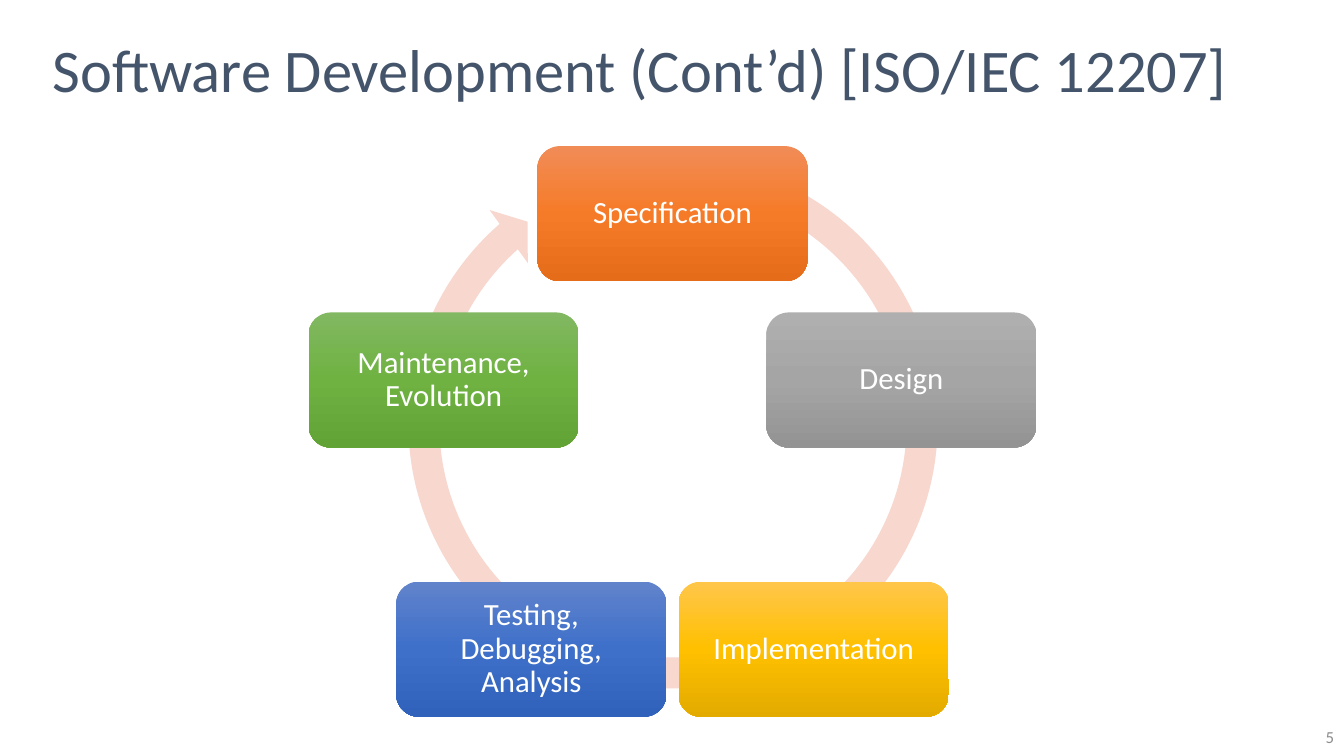
from copy import deepcopy
from dataclasses import dataclass
from math import cos, radians, sin

from pptx import Presentation
from pptx.dml.color import RGBColor
from pptx.enum.shapes import MSO_SHAPE as Shape
from pptx.enum.text import MSO_ANCHOR as Anchor, MSO_AUTO_SIZE as AutoSize, PP_ALIGN as Align
from pptx.oxml.ns import qn
from pptx.util import Inches, Pt

HEADING = "Software Development (Cont’d) [ISO/IEC 12207]"
PAGE = "5"
PHASES = [
    ("Specification", ("F18C57", "F67B28", "E56C19")),
    ("Design", ("AFAFAF", "A5A5A5", "939393")),
    ("Implementation", ("FFC64B", "FFC000", "E3AB00")),
    ("Testing, Debugging, Analysis", ("6183CB", "3E70CA", "3062BB")),
    ("Maintenance, Evolution", ("81B861", "6FB242", "62A336")),
]


@dataclass(frozen=True)
class Theme:
    font: str = "Calibri"
    heading: str = "44546A"
    label: str = "FFFFFF"
    page: str = "8C8C8C"
    cycle: str = "F8D7CE"
    heading_size: float = 43.2
    label_size: float = 22
    page_size: float = 12


THEME = Theme()
SLIDE_W, SLIDE_H = 13.33, 7.5
CENTER_X, CENTER_Y, RADIUS = 6.67, 4.51, 2.39
PHASE_W, PHASE_H = 2.68, 1.34
CYCLE_TOP, CYCLE_SIZE = 1.41, 5.59
CYCLE_ADJUSTMENTS = (0.055, 3.307, 137.252, 174.169, 0.058)


def box(left, top, width, height):
    return [Inches(round(length, 2)) for length in (left, top, width, height)]


def write(frame, text, size, color, align, spacing=None):
    frame.text = text
    frame.word_wrap = True
    frame.auto_size = AutoSize.NONE
    frame.vertical_anchor = Anchor.MIDDLE
    paragraph = frame.paragraphs[0]
    paragraph.alignment = align
    paragraph.line_spacing = spacing
    paragraph.font.name = THEME.font
    paragraph.font.size = Pt(size)
    paragraph.font.color.rgb = RGBColor.from_string(color)


def shade(fill, gradient_parent, colors):
    fill.gradient()
    fill.gradient_angle = 270
    stop_list = gradient_parent.find(qn("a:gradFill")).find(qn("a:gsLst"))
    stop_list.append(deepcopy(stop_list[-1]))
    for stop, position, color in zip(fill.gradient_stops, (0, 0.5, 1), colors):
        stop.position = position
        stop.color.rgb = RGBColor.from_string(color)


def add_plain_shape(slide, preset, area):
    shape = slide.shapes.add_shape(preset, *area)
    shape.shadow.inherit = False
    shape.line.fill.background()
    return shape


def add_cycle(slide):
    area = box(CENTER_X - CYCLE_SIZE / 2, CYCLE_TOP, CYCLE_SIZE, CYCLE_SIZE)
    cycle = add_plain_shape(slide, Shape.CIRCULAR_ARROW, area)
    for index, value in enumerate(CYCLE_ADJUSTMENTS):
        cycle.adjustments[index] = value
    cycle.fill.solid()
    cycle.fill.fore_color.rgb = RGBColor.from_string(THEME.cycle)


def add_phase(slide, index, label, colors):
    angle = radians(360 / len(PHASES) * index)
    left = CENTER_X + RADIUS * sin(angle) - PHASE_W / 2
    top = CENTER_Y - RADIUS * cos(angle) - PHASE_H / 2
    phase = add_plain_shape(slide, Shape.ROUNDED_RECTANGLE, box(left, top, PHASE_W, PHASE_H))
    shade(phase.fill, phase._element.spPr, colors)
    frame = phase.text_frame
    frame.margin_left = frame.margin_right = Inches(0.09)
    frame.margin_top = frame.margin_bottom = Inches(0.09)
    write(frame, label, THEME.label_size, THEME.label, Align.CENTER, 0.9)


def main():
    deck = Presentation()
    deck.slide_width, deck.slide_height = Inches(SLIDE_W), Inches(SLIDE_H)
    slide = deck.slides.add_slide(deck.slide_layouts[5])

    heading = slide.shapes.title
    heading.left, heading.top, heading.width, heading.height = box(0.42, 0, 12.5, 1.45)
    write(heading.text_frame, HEADING, THEME.heading_size, THEME.heading, Align.LEFT, 0.9)

    add_cycle(slide)
    for index, (label, colors) in enumerate(PHASES):
        add_phase(slide, index, label, colors)

    page = slide.shapes.add_textbox(*box(10.33, 7.11, 3, 0.4))
    write(page.text_frame, PAGE, THEME.page_size, THEME.page, Align.RIGHT)

    deck.save("out.pptx")


if __name__ == "__main__":
    main()
